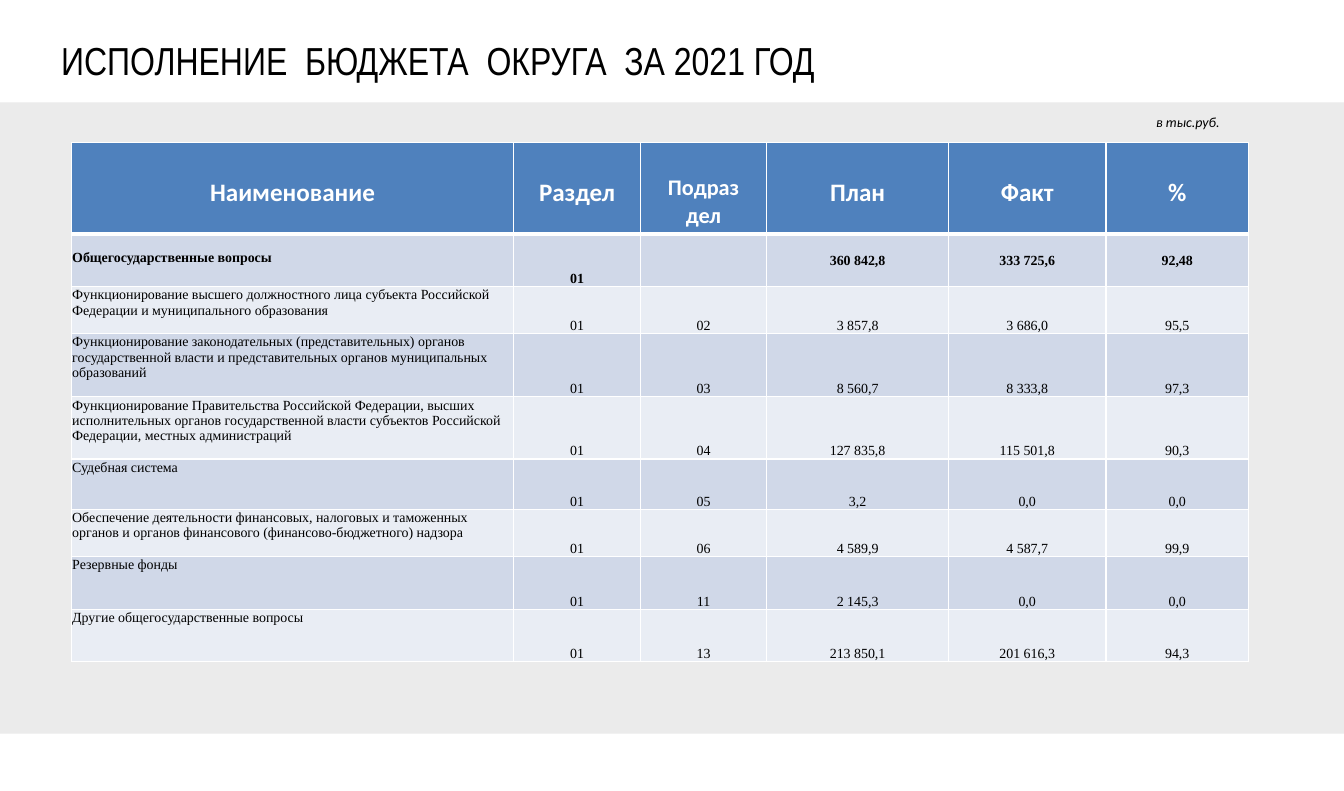
from lxml import etree
from pptx import Presentation
from pptx import util as u
from pptx.dml.color import RGBColor
from pptx.enum import shapes, text
from pptx.oxml.ns import qn

PAGE_WIDTH, PAGE_HEIGHT = u.Inches(13.39), u.Inches(7.88)
WHITE = RGBColor(0xFF, 0xFF, 0xFF)
BLACK = RGBColor(0x00, 0x00, 0x00)
BAND_GREY = RGBColor(0xEB, 0xEB, 0xEB)
HEADER_BLUE = RGBColor(0x4F, 0x81, 0xBD)
ROW_FILLS = (RGBColor(0xD0, 0xD8, 0xE8), RGBColor(0xE9, 0xED, 0xF4))

COLUMN_WIDTHS = (4.41, 1.26, 1.26, 1.81, 1.57, 1.42)
ROW_HEIGHTS = (0.91, 0.52, 0.47, 0.63, 0.62, 0.5, 0.47, 0.53, 0.52)
THIN, THICK = 1, 3
TOP, MIDDLE, BOTTOM = (text.MSO_ANCHOR.TOP, text.MSO_ANCHOR.MIDDLE,
                       text.MSO_ANCHOR.BOTTOM)

HEADERS = ("Наименование", "Раздел", "Подраз\nдел", "План", "Факт", "%")
BUDGET = (
    ("Общегосударственные вопросы",
     "01", "", "360 842,8", "333 725,6", "92,48"),
    ("Функционирование высшего должностного лица субъекта Российской "
     "Федерации и муниципального образования",
     "01", "02", "3 857,8", "3 686,0", "95,5"),
    ("Функционирование законодательных (представительных) органов "
     "государственной власти и представительных органов муниципальных "
     "образований",
     "01", "03", "8 560,7", "8 333,8", "97,3"),
    ("Функционирование Правительства Российской Федерации, высших "
     "исполнительных органов государственной власти субъектов Российской "
     "Федерации, местных администраций",
     "01", "04", "127 835,8", "115 501,8", "90,3"),
    ("Судебная система", "01", "05", "3,2", "0,0", "0,0"),
    ("Обеспечение деятельности финансовых, налоговых и таможенных органов "
     "и органов финансового (финансово-бюджетного) надзора",
     "01", "06", "4 589,9", "4 587,7", "99,9"),
    ("Резервные фонды", "01", "11", "2 145,3", "0,0", "0,0"),
    ("Другие общегосударственные вопросы",
     "01", "13", "213 850,1", "201 616,3", "94,3"),
)


def area(left, top, width, height):
    """Turn percentages of the page into left, top, width and height."""
    return (int(PAGE_WIDTH * left / 100), int(PAGE_HEIGHT * top / 100),
            int(PAGE_WIDTH * width / 100), int(PAGE_HEIGHT * height / 100))


def set_font(para, name, size, color, bold=False, italic=False):
    font = para.font
    font.name, font.size = name, u.Pt(size)
    font.bold, font.italic = bold, italic
    font.color.rgb = color


def add_band(page, place):
    band = page.shapes.add_shape(shapes.MSO_SHAPE.RECTANGLE, *place)
    band.shadow.inherit = False
    band.fill.solid()
    band.fill.fore_color.rgb = BAND_GREY
    band.line.fill.background()


def add_label(page, place, wording, name, size, italic=False):
    frame = page.shapes.add_textbox(*place).text_frame
    frame.word_wrap = True
    frame.auto_size = text.MSO_AUTO_SIZE.SHAPE_TO_FIT_TEXT
    frame.text = wording
    set_font(frame.paragraphs[0], name, size, BLACK, italic=italic)


def set_borders(cell, top, bottom):
    """Draw white cell edges; top and bottom are widths in points."""
    properties = cell._tc.get_or_add_tcPr()
    for side, width in (("L", THIN), ("R", THIN), ("T", top), ("B", bottom)):
        edge = etree.SubElement(properties, qn(f"a:ln{side}"),
                                w=str(u.Pt(width)))
        fill = etree.SubElement(edge, qn("a:solidFill"))
        etree.SubElement(fill, qn("a:srgbClr"), val=str(WHITE))


def fill_cell(cell, wording, fill, anchor, margins, centred, font):
    """Margins are left, top, right and bottom in inches."""
    cell.fill.solid()
    cell.fill.fore_color.rgb = fill
    cell.vertical_anchor = anchor
    (cell.margin_left, cell.margin_top,
     cell.margin_right, cell.margin_bottom) = map(u.Inches, margins)
    cell.text_frame.text = wording
    for para in cell.text_frame.paragraphs:
        para.alignment = text.PP_ALIGN.CENTER if centred else text.PP_ALIGN.LEFT
        set_font(para, *font)


def fill_header(table):
    for column, wording in enumerate(HEADERS):
        cell = table.cell(0, column)
        two_lines = "\n" in wording
        size, top = (16, 0.32) if two_lines else (18, 0.35)
        set_borders(cell, THIN, THICK)
        fill_cell(cell, wording, HEADER_BLUE, TOP, (0.1, top, 0.1, 0.05),
                  True, ("Calibri", size, WHITE, True))


def fill_budget(table):
    for row, values in enumerate(BUDGET, start=1):
        total = row == 1
        for column, wording in enumerate(values):
            is_name = column == 0
            if is_name:
                anchor = TOP
            else:
                anchor = MIDDLE if total and column > 2 else BOTTOM
            top = 0.16 if total and is_name else 0.01
            cell = table.cell(row, column)
            set_borders(cell, THICK if total else THIN, THIN)
            fill_cell(cell, wording, ROW_FILLS[(row - 1) % 2], anchor,
                      (0.01, top, 0.01, 0), not is_name,
                      ("Times New Roman", 10, BLACK, total))


def add_budget_table(page, place):
    table = page.shapes.add_table(len(ROW_HEIGHTS), len(COLUMN_WIDTHS),
                                  *place).table
    for column, width in zip(table.columns, COLUMN_WIDTHS):
        column.width = u.Inches(width)
    for row, height in zip(table.rows, ROW_HEIGHTS):
        row.height = u.Inches(height)
    fill_header(table)
    fill_budget(table)


def main():
    deck = Presentation()
    deck.slide_width, deck.slide_height = PAGE_WIDTH, PAGE_HEIGHT
    page = deck.slides.add_slide(deck.slide_layouts[6])
    add_band(page, area(0, 12.94, 100, 79.82))
    add_budget_table(page, area(5.3, 18.02, 87.6, 65.6))
    add_label(page, area(3.81, 3.93, 91.34, 7.23),
              "ИСПОЛНЕНИЕ  БЮДЖЕТА  ОКРУГА  ЗА 2021 ГОД", "Arial Narrow", 28)
    add_label(page, area(85.29, 13.71, 6.65, 3.43),
              "в тыс.руб.", "Calibri", 10, italic=True)
    deck.save("out.pptx")


if __name__ == "__main__":
    main()
